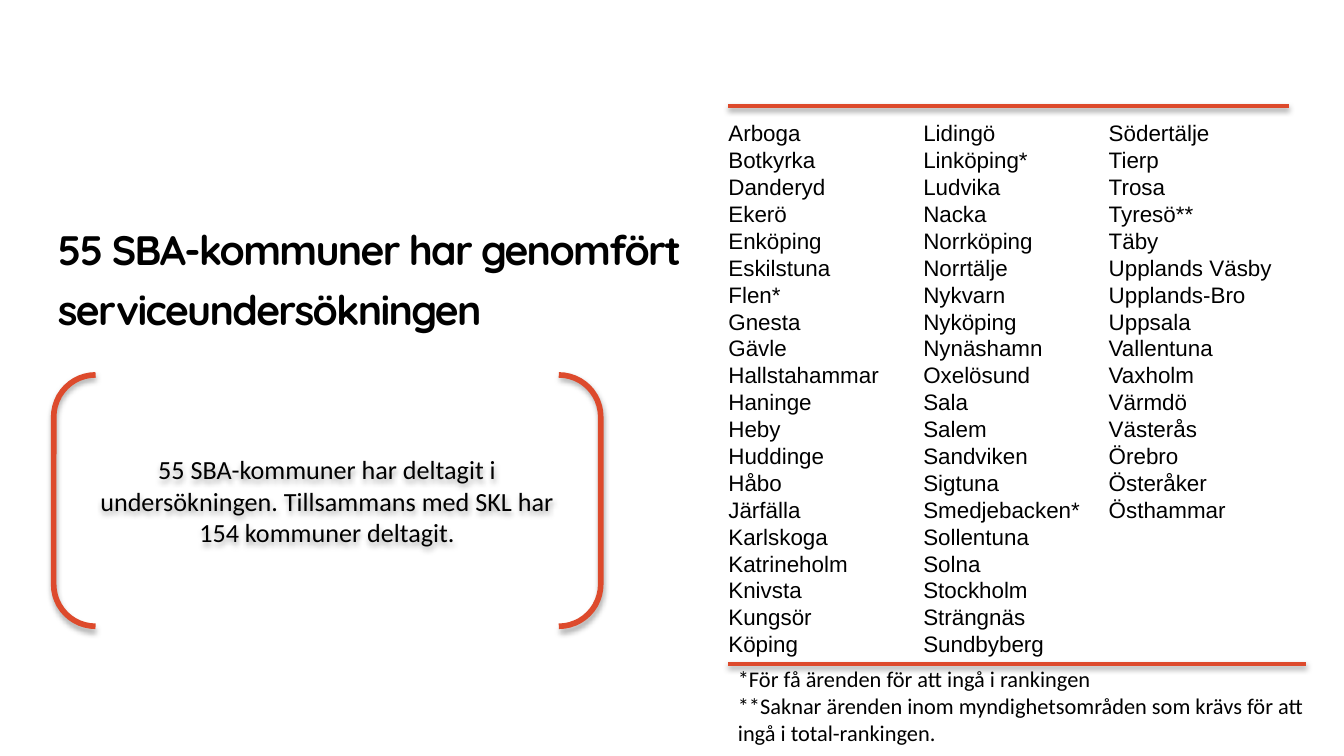
from lxml import etree
from pptx import Presentation
from pptx.dml.color import RGBColor
from pptx.enum.shapes import MSO_CONNECTOR, MSO_SHAPE as SHAPE
from pptx.enum.text import MSO_ANCHOR as ANCHOR, PP_ALIGN as ALIGN
from pptx.oxml import parse_xml
from pptx.oxml.ns import nsdecls, qn
from pptx.util import Inches, Pt

COLORS = {"text": "000000", "accent": "DD4A2C", "shadow": "000000"}

MUNICIPALITY_COLUMNS = [
    (0, ["Arboga", "Botkyrka", "Danderyd", "Ekerö", "Enköping", "Eskilstuna",
         "Flen*", "Gnesta", "Gävle", "Hallstahammar", "Haninge", "Heby",
         "Huddinge", "Håbo", "Järfälla", "Karlskoga", "Katrineholm",
         "Knivsta", "Kungsör", "Köping"]),
    (1.45, ["Lidingö", "Linköping*", "Ludvika", "Nacka", "Norrköping",
            "Norrtälje", "Nykvarn", "Nyköping", "Nynäshamn", "Oxelösund",
            "Sala", "Salem", "Sandviken", "Sigtuna", "Smedjebacken*",
            "Sollentuna", "Solna", "Stockholm", "Strängnäs", "Sundbyberg"]),
    (2.83, ["Södertälje", "Tierp", "Trosa", "Tyresö**", "Täby",
            "Upplands Väsby", "Upplands-Bro", "Uppsala", "Vallentuna",
            "Vaxholm", "Värmdö", "Västerås", "Örebro", "Österåker",
            "Östhammar"]),
]
FOOTNOTES = [
    "*För få ärenden för att ingå i rankingen",
    "**Saknar ärenden inom myndighetsområden som krävs för att",
    "ingå i total-rankingen.",
]


def color(name):
    return RGBColor.from_string(COLORS[name])


def write_text(frame, lines, font="Calibri", size=12, bold=False,
               align=ALIGN.LEFT, line_spacing=None, tracking=None):
    """Write one paragraph per line; tracking is in points."""
    frame.word_wrap = True
    for index, line in enumerate(lines):
        paragraph = frame.add_paragraph() if index else frame.paragraphs[0]
        paragraph.alignment = align
        if line_spacing:
            paragraph.line_spacing = Pt(line_spacing)
        run = paragraph.add_run()
        run.text = line
        run.font.name = font
        run.font.size = Pt(size)
        run.font.bold = bold
        run.font.color.rgb = color("text")
        if tracking:
            run.font._element.set("spc", str(round(tracking * 100)))


def add_text(slide, left, top, width, height, lines, **text_format):
    box = slide.shapes.add_textbox(Inches(left), Inches(top),
                                   Inches(width), Inches(height))
    frame = box.text_frame
    frame.margin_left = frame.margin_right = 0
    frame.margin_top = frame.margin_bottom = 0
    write_text(frame, lines, **text_format)


def add_shadow(shape, distance, opacity):
    """Give the shape a soft downward shadow; opacity is in percent."""
    properties = shape._element.spPr
    for effects in properties.findall(qn("a:effectLst")):
        properties.remove(effects)
    effects = parse_xml(f"<a:effectLst {nsdecls('a')}/>")
    outer = etree.SubElement(effects, qn("a:outerShdw"), blurRad=str(Pt(3.1)),
                             dist=str(Pt(distance)), dir="5400000",
                             rotWithShape="0")
    shade = etree.SubElement(outer, qn("a:srgbClr"), val=COLORS["shadow"])
    etree.SubElement(shade, qn("a:alpha"), val=str(opacity * 1000))
    properties.append(effects)


def add_rule(slide, left, top, width):
    rule = slide.shapes.add_connector(
        MSO_CONNECTOR.STRAIGHT, Inches(left), Inches(top),
        Inches(left + width), Inches(top))
    rule.line.color.rgb = color("accent")
    rule.line.width = Pt(2)
    add_shadow(rule, 1.6, 38)


def add_heading(slide, left, top, width, height):
    add_text(slide, left, top, width, height,
             ["55 SBA-kommuner har genomfört serviceundersökningen"],
             font="Quicksand", size=22, bold=True, line_spacing=32.1,
             tracking=-0.87)


def add_bracketed_summary(slide, left, top, width, height):
    bracket = slide.shapes.add_shape(SHAPE.DOUBLE_BRACKET, Inches(left),
                                     Inches(top), Inches(width),
                                     Inches(height))
    bracket.fill.background()
    bracket.line.color.rgb = color("accent")
    bracket.line.width = Pt(3)
    add_shadow(bracket, 1.8, 35)
    bracket.text_frame.vertical_anchor = ANCHOR.MIDDLE
    write_text(bracket.text_frame,
               ["55 SBA-kommuner har deltagit i undersökningen. "
                "Tillsammans med SKL har 154 kommuner deltagit."],
               size=14, align=ALIGN.CENTER)


def add_municipality_list(slide, left, top, width, height):
    """Place the name columns between two rules, with footnotes below."""
    add_rule(slide, left, top, width - 0.13)
    for offset, names in MUNICIPALITY_COLUMNS:
        add_text(slide, left + offset, top + 0.1, 1.6, height - 0.18, names,
                 font="Arial", line_spacing=14.4)
    add_rule(slide, left, top + height, width)
    add_text(slide, left + 0.07, top + height + 0.01, width - 0.01, 0.56,
             FOOTNOTES)


def main():
    presentation = Presentation()
    presentation.slide_width = Inches(10)
    presentation.slide_height = Inches(10) * 9 // 16
    slide = presentation.slides.add_slide(presentation.slide_layouts[6])
    add_heading(slide, 0.43, 1.59, 4.98, 0.8)
    add_bracketed_summary(slide, 0.4, 2.79, 4.07, 1.87)
    add_municipality_list(slide, 5.42, 0.79, 4.3, 4.15)
    presentation.save("out.pptx")


if __name__ == "__main__":
    main()
